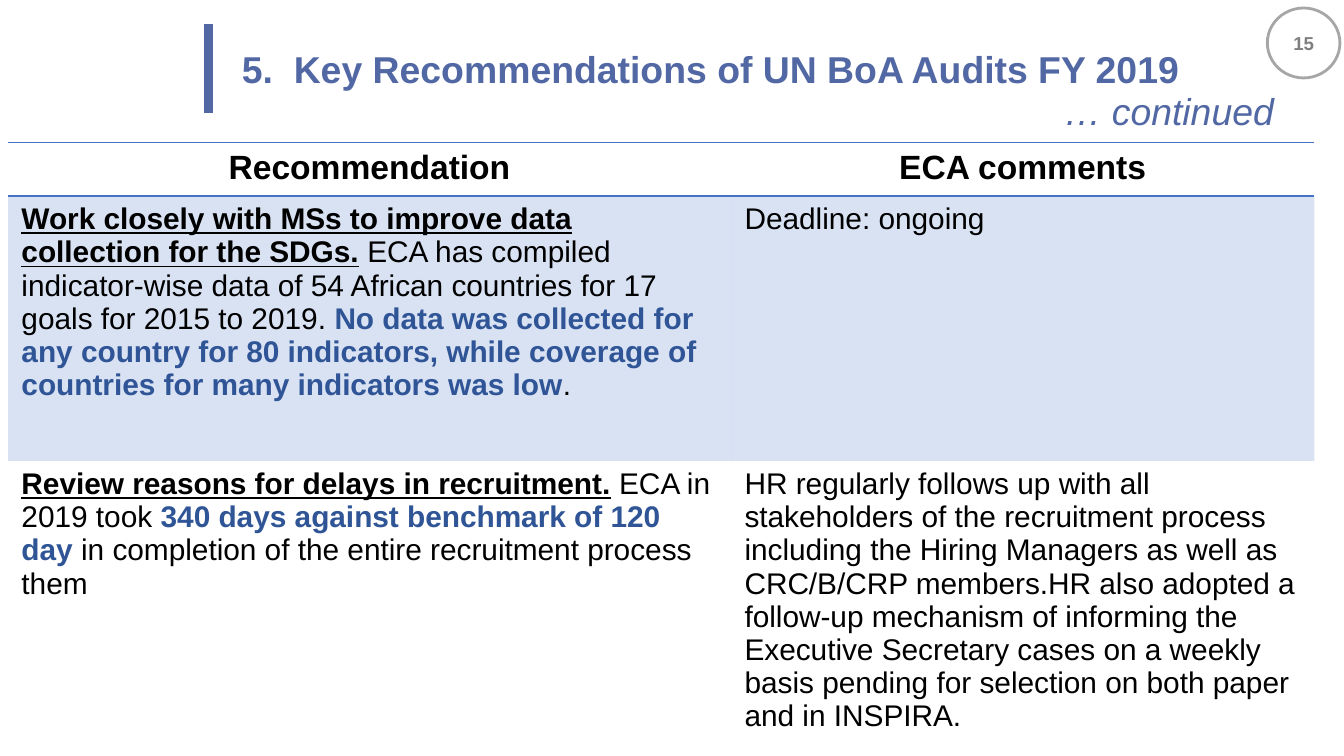
from lxml import etree
from pptx import Presentation
from pptx.dml.color import RGBColor
from pptx.enum.shapes import MSO_CONNECTOR, MSO_SHAPE
from pptx.enum.text import MSO_ANCHOR, PP_ALIGN
from pptx.oxml.ns import qn
from pptx.util import Inches, Pt

CENTER, LEFT, RIGHT = PP_ALIGN.CENTER, PP_ALIGN.LEFT, PP_ALIGN.RIGHT
MIDDLE = MSO_ANCHOR.MIDDLE
OVAL, STRAIGHT = MSO_SHAPE.OVAL, MSO_CONNECTOR.STRAIGHT
COLORS = {
    "title": "5268A4", "rule": "4472C4", "emphasis": "2F5597", "text": "000000",
    "badge_line": "A6A6A6", "badge_text": "7F7F7F", "white": "FFFFFF",
}


def add_run(paragraph, text, size, color="text", bold=False, italic=False, underline=False):
    run = paragraph.add_run()
    run.text = text
    font = run.font
    font.name, font.size = "Arial", Pt(size)
    font.bold, font.italic, font.underline = bold, italic, underline
    font.color.rgb = RGBColor.from_string(COLORS[color])


def add_border(cell, side, visible):
    line = etree.SubElement(cell._tc.get_or_add_tcPr(), qn(f"a:ln{side}"), w=str(Pt(1)))
    if visible:
        fill = etree.SubElement(line, qn("a:solidFill"))
        etree.SubElement(fill, qn("a:srgbClr"), val=COLORS["rule"])
    else:
        etree.SubElement(line, qn("a:noFill"))


# A 16:9 slide, 10 inches wide
presentation = Presentation()
presentation.slide_width = Inches(10)
presentation.slide_height = Inches(10 * 9 / 16)
slide = presentation.slides.add_slide(presentation.slide_layouts[6])

# Page number badge
badge = slide.shapes.add_shape(OVAL, Inches(9.43), Inches(0.06), Inches(0.54), Inches(0.52))
badge.shadow.inherit = False
badge.fill.solid()
badge.fill.fore_color.rgb = RGBColor.from_string(COLORS["white"])
badge.line.color.rgb = RGBColor.from_string(COLORS["badge_line"])
badge.line.width = Pt(1.5)
badge.text_frame.vertical_anchor = MIDDLE
badge.text_frame.margin_left = badge.text_frame.margin_right = 0
badge_paragraph = badge.text_frame.paragraphs[0]
badge_paragraph.alignment = CENTER
add_run(badge_paragraph, "15", 10, "badge_text", bold=True)

# Recommendations table: each cell is a list of paragraphs, each a list of runs
HEADING = {"bold": True, "underline": True}
EMPHASIS = {"bold": True, "color": "emphasis"}
rows = [
    [[[("Recommendation", {"bold": True})]], [[("ECA comments", {"bold": True})]]],
    [
        [[
            ("Work closely with MSs to improve data collection for the SDGs.", HEADING),
            (" ECA has compiled indicator-wise data of 54 African countries "
             "for 17 goals for 2015 to 2019. ", {}),
            ("No data was collected for any country for 80 indicators, while "
             "coverage of countries for many indicators was low", EMPHASIS),
            (".", {}),
        ]],
        [[("Deadline: ongoing", {})]],
    ],
    [
        [
            [
                ("Review reasons for delays in recruitment.", HEADING),
                (" ECA in 2019 took ", {}),
                ("340 days against benchmark of 120 day ", EMPHASIS),
                ("in completion of the entire recruitment process", {}),
            ],
            [("them", {})],
        ],
        [[("HR regularly follows up with all stakeholders of the recruitment process "
           "including the Hiring Managers as well as CRC/B/CRP members.HR also adopted "
           "a follow-up mechanism of informing the Executive Secretary cases on a weekly "
           "basis pending for selection on both paper and in INSPIRA.", {})]],
    ],
]
table = slide.shapes.add_table(
    3, 2, Inches(0.06), Inches(1.06), Inches(9.72), Inches(4.6)).table
for column, width in zip(table.columns, (5.38, 4.34)):
    column.width = Inches(width)
for row, height in zip(table.rows, (0.4, 1.97, 2.23)):
    row.height = Inches(height)

for row_index, row_cells in enumerate(rows):
    is_header = row_index == 0
    for column_index, paragraphs in enumerate(row_cells):
        cell = table.cell(row_index, column_index)
        # Rules lie above and below the header and under the last row
        for side in "LRTB":
            ruled = (side == "T" and row_index < 2) or (side == "B" and row_index != 1)
            add_border(cell, side, ruled)
        if row_index == 1:
            cell.fill.solid()
            cell.fill.fore_color.rgb = RGBColor.from_string(COLORS["rule"])
            color_element = cell._tc.tcPr.find(qn("a:solidFill"))[0]
            etree.SubElement(color_element, qn("a:alpha"), val="20000")
        else:
            cell.fill.background()
        for index, runs in enumerate(paragraphs):
            text_frame = cell.text_frame
            paragraph = text_frame.add_paragraph() if index else text_frame.paragraphs[0]
            paragraph.alignment = CENTER if is_header else LEFT
            for text, style in runs:
                add_run(paragraph, text, 18 if is_header else 16, **style)

# Title and its continuation line
for text, box, alignment, spacing, style in [
    ("… continued", (2.64, 0.64, 6.86, 0.43), RIGHT, 0.8, {"italic": True}),
    ("5.  Key Recommendations of UN BoA Audits FY 2019",
     (1.78, 0.24, 7.71, 0.54), LEFT, 1.0, {"bold": True}),
]:
    text_frame = slide.shapes.add_textbox(*map(Inches, box)).text_frame
    text_frame.word_wrap = True
    text_frame.vertical_anchor = MIDDLE
    text_frame.margin_left = text_frame.margin_right = Inches(0.02)
    text_frame.margin_top = text_frame.margin_bottom = Inches(0.02)
    paragraph = text_frame.paragraphs[0]
    paragraph.alignment = alignment
    paragraph.line_spacing = spacing
    add_run(paragraph, text, 20, "title", **style)

# Accent bar beside the title
bar = slide.shapes.add_connector(
    STRAIGHT, Inches(1.55), Inches(0.84), Inches(1.55), Inches(0.18))
bar.line.color.rgb = RGBColor.from_string(COLORS["title"])
bar.line.width = Pt(5)
etree.SubElement(bar._element.spPr, qn("a:effectLst"))

presentation.save("out.pptx")
